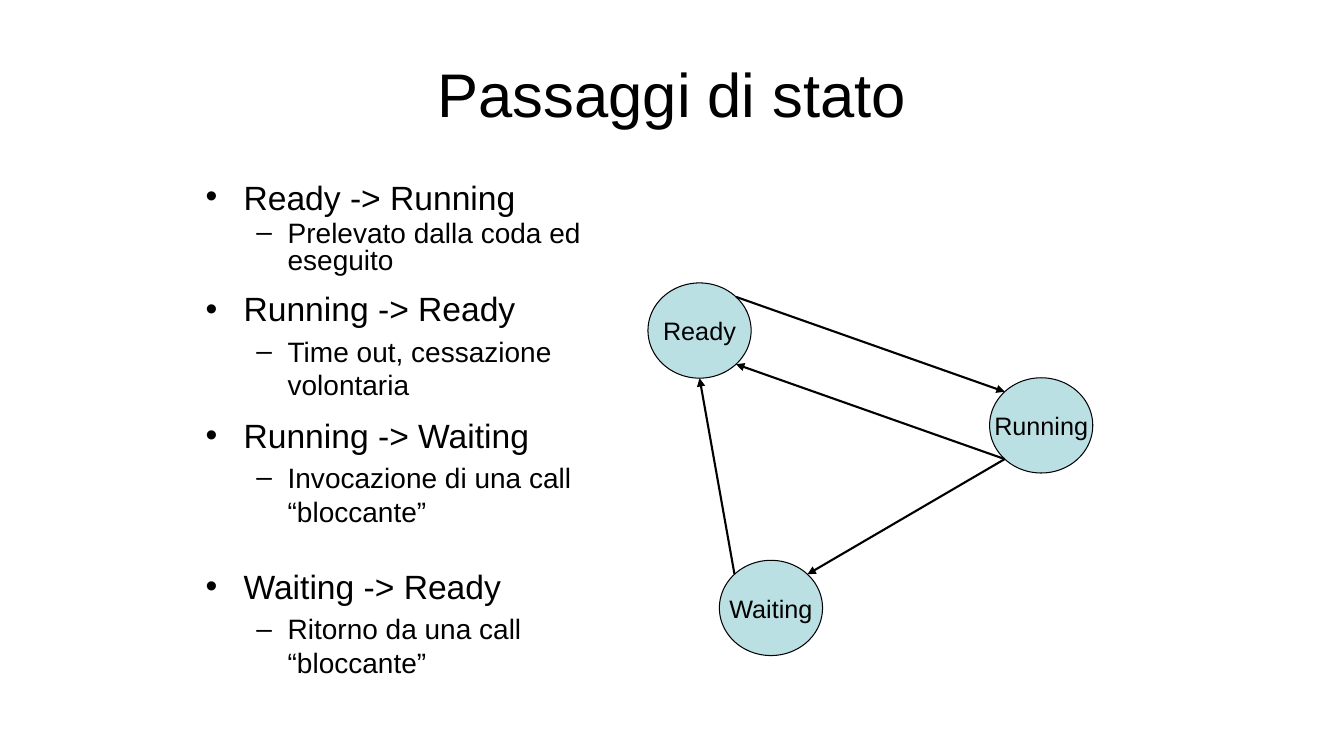
from dataclasses import dataclass
from math import cos, radians, sin

from lxml import etree
from pptx import Presentation
from pptx import util as u
from pptx.dml.color import RGBColor
from pptx.enum import shapes, text
from pptx.oxml import ns


@dataclass(frozen=True)
class Theme:
    """Colours, font and type sizes of the slide."""
    font: str = "Arial"
    ink: RGBColor = RGBColor(0, 0, 0)
    state: RGBColor = RGBColor(0xBB, 0xE0, 0xE3)
    title: int = 44
    heading: int = 24
    detail: int = 20
    label: int = 18
    outline: float = 0.75
    arrow: float = 1.5


THEME = Theme()

TRANSITIONS = [
    (4.52, 2.79, 0.8, "Ready -> Running", "Prelevato dalla coda ed eseguito"),
    (7.14, 3.2, None, "Running -> Ready", "Time out, cessazione volontaria"),
    (10.32, 3.2, None, "Running -> Waiting", "Invocazione di una call “bloccante”"),
    (14.13, 3.4, None, "Waiting -> Ready", "Ritorno da una call “bloccante”"),
]

STATE_W, STATE_H = 2.6, 2.4
STATES = {"Ready": (0, 0), "Waiting": (1.8, 6.99), "Running": (8.61, 2.39)}
TOP_RIGHT, TOP_LEFT, BOTTOM_LEFT, BOTTOM, BOTTOM_RIGHT = -45, -135, 135, 90, 45
ARROWS = [
    ("Running", BOTTOM_LEFT, "Ready", BOTTOM_RIGHT),
    ("Running", BOTTOM_LEFT, "Waiting", TOP_RIGHT),
    ("Ready", TOP_RIGHT, "Running", TOP_LEFT),
    ("Waiting", TOP_LEFT, "Ready", BOTTOM),
]


def style(p, size):
    """Apply the theme font and ink to the runs of a paragraph."""
    for r in p.runs:
        r.font.name = THEME.font
        r.font.size = u.Pt(size)
        r.font.color.rgb = THEME.ink


def add_bullet(p, char, margin, hanging):
    """Give a paragraph a hanging bullet and 20% space before."""
    pPr = p._p.get_or_add_pPr()
    pPr.set("marL", str(u.Cm(margin)))
    pPr.set("indent", str(-u.Cm(hanging)))
    before = etree.SubElement(pPr, ns.qn("a:spcBef"))
    etree.SubElement(before, ns.qn("a:spcPct")).set("val", "20000")
    etree.SubElement(pPr, ns.qn("a:buFont")).set("typeface", THEME.font)
    etree.SubElement(pPr, ns.qn("a:buChar")).set("char", char)


def add_title(s, x, y, w, h):
    """Place and format the title placeholder."""
    sp = s.shapes.title
    sp.left, sp.top, sp.width, sp.height = map(u.Cm, (x, y, w, h))
    tf = sp.text_frame
    tf.text = "Passaggi di stato"
    tf.auto_size = text.MSO_AUTO_SIZE.NONE
    tf.vertical_anchor = text.MSO_ANCHOR.MIDDLE
    tf.paragraphs[0].alignment = text.PP_ALIGN.CENTER
    style(tf.paragraphs[0], THEME.title)


def add_transition(s, x, y, w, h, spacing, heading, detail):
    """Add a state transition with its explanation."""
    tf = s.shapes.add_textbox(*map(u.Cm, (x, y, w, h))).text_frame
    tf.word_wrap = True
    levels = [
        (heading, THEME.heading, "•", 0.96, 0.96),
        (detail, THEME.detail, "–", 2.07, 0.79),
    ]
    for level, (words, size, char, margin, hanging) in enumerate(levels):
        p = tf.add_paragraph() if level else tf.paragraphs[0]
        p.text = words
        p.level = level
        p.line_spacing = spacing
        add_bullet(p, char, margin, hanging)
        style(p, size)


def add_state(s, name, x, y):
    """Add one state as a labelled ellipse."""
    sp = s.shapes.add_shape(
        shapes.MSO_SHAPE.OVAL, *map(u.Cm, (x, y, STATE_W, STATE_H)))
    sp.shadow.inherit = False
    sp.fill.solid()
    sp.fill.fore_color.rgb = THEME.state
    sp.line.color.rgb = THEME.ink
    sp.line.width = u.Pt(THEME.outline)
    tf = sp.text_frame
    tf.word_wrap = False
    tf.vertical_anchor = text.MSO_ANCHOR.MIDDLE
    p = tf.paragraphs[0]
    p.text = name
    p.alignment = text.PP_ALIGN.CENTER
    style(p, THEME.label)


def rim(x, y, name, angle):
    """Return the point on a state's outline at an angle in degrees."""
    dx, dy = STATES[name]
    a = radians(angle)
    return (u.Cm(x + dx + STATE_W / 2 * (1 + cos(a))),
            u.Cm(y + dy + STATE_H / 2 * (1 + sin(a))))


def add_arrow(s, start, end):
    """Add a straight arrow between two points."""
    cxn = s.shapes.add_connector(shapes.MSO_CONNECTOR.STRAIGHT, *start, *end)
    cxn.line.color.rgb = THEME.ink
    cxn.line.width = u.Pt(THEME.arrow)
    etree.SubElement(cxn.line._get_or_add_ln(), ns.qn("a:tailEnd")).set("type", "triangle")
    etree.SubElement(cxn._element.spPr, ns.qn("a:effectLst"))


def add_diagram(s, x, y):
    """Draw the state diagram from its top left corner."""
    for name, (dx, dy) in STATES.items():
        add_state(s, name, x + dx, y + dy)
    for source, leave, target, arrive in ARROWS:
        add_arrow(s, rim(x, y, source, leave), rim(x, y, target, arrive))


def main():
    """Build and save the presentation."""
    prs = Presentation()
    prs.slide_width, prs.slide_height = u.Cm(33.87), u.Cm(19.05)
    s = prs.slides.add_slide(prs.slide_layouts[5])
    add_title(s, 1.7, 0.76, 30.48, 3.18)
    for y, h, spacing, heading, detail in TRANSITIONS:
        add_transition(s, 4.93, y, 10.64, h, spacing, heading, detail)
    add_diagram(s, 16.33, 7.13)
    prs.save("out.pptx")


if __name__ == "__main__":
    main()
